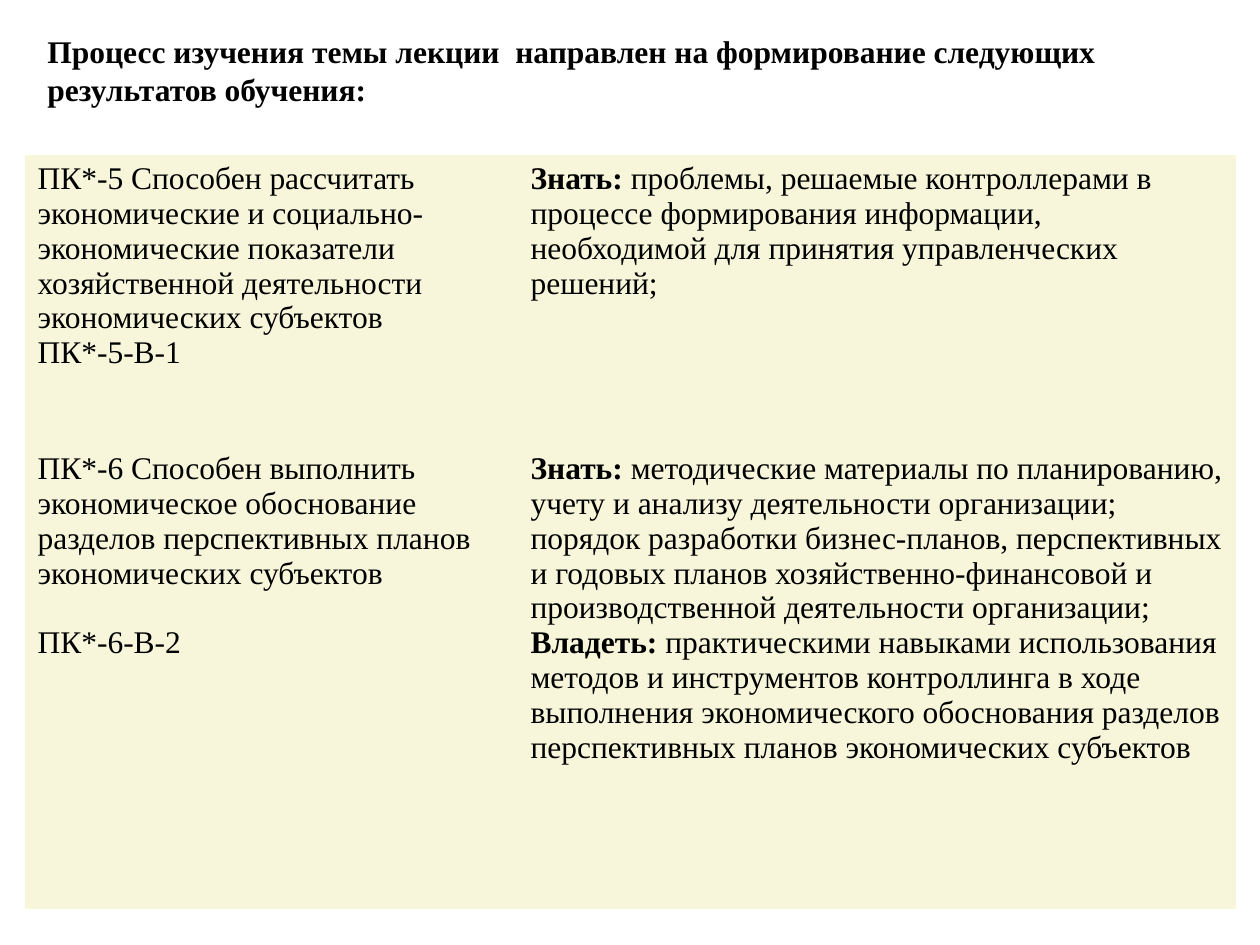
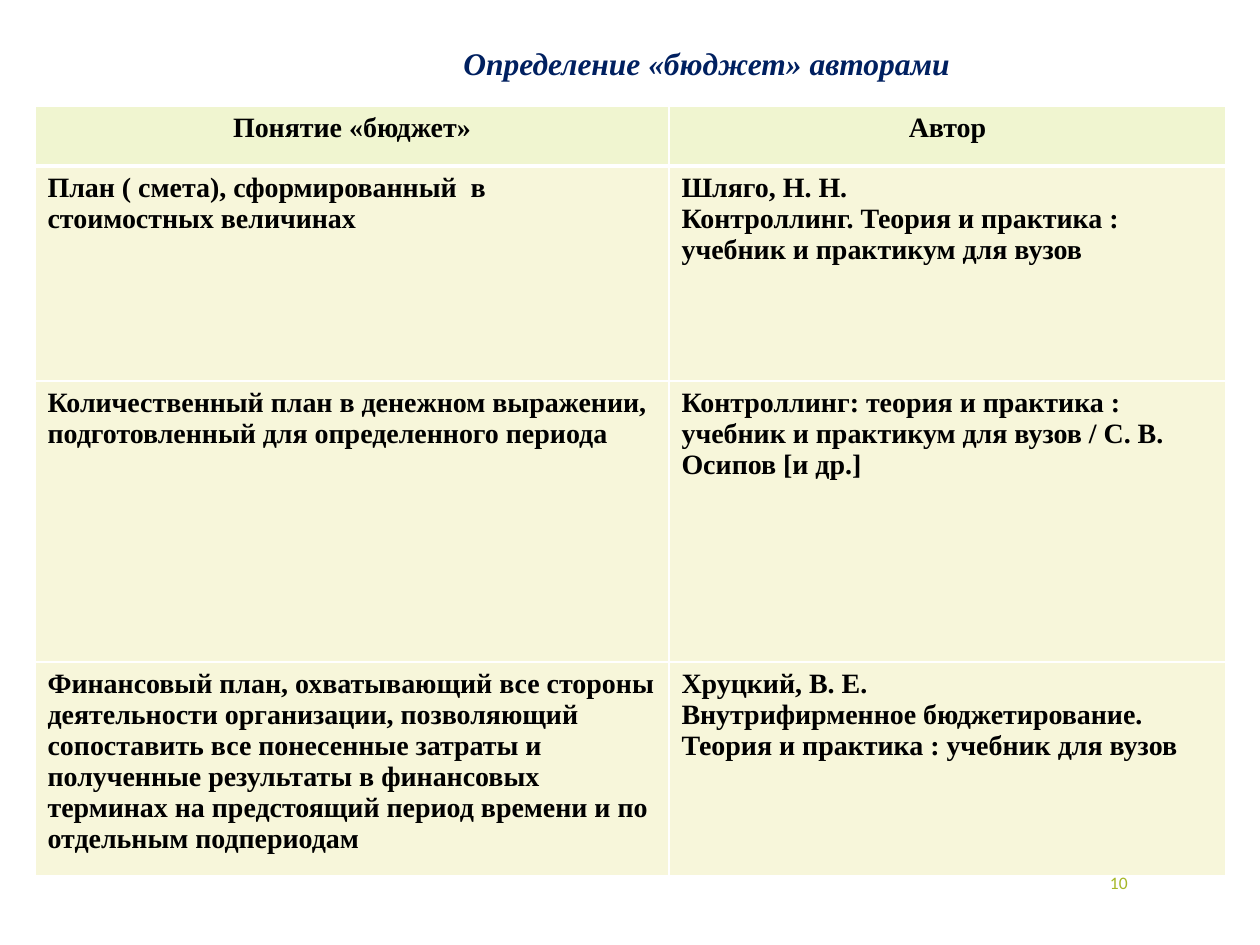
from lxml import etree
from pptx import Presentation
from pptx.dml.color import RGBColor
from pptx.enum.text import MSO_ANCHOR, PP_ALIGN
from pptx.oxml.ns import qn
from pptx.util import Emu, Pt

PX = 914400 / 126
LEFT, CENTER, RIGHT = PP_ALIGN.LEFT, PP_ALIGN.CENTER, PP_ALIGN.RIGHT
TOP, MIDDLE = MSO_ANCHOR.TOP, MSO_ANCHOR.MIDDLE
PLAIN_TABLE = "{2D5ABB26-0587-4C30-8999-92F81FD0307C}"
COLORS = {"text": "000000", "title": "002060", "number": "A6B727",
          "head": "F0F5D0", "body": "F7F6DA", "border": "FFFFFF"}

BODY = {"name": "Times New Roman", "size": Pt(18), "bold": False, "color": "text"}
BOLD = {**BODY, "bold": True}
CELL = {**BOLD, "size": Pt(16)}
TITLE = {**BOLD, "italic": True, "color": "title"}
NUMBER = {"name": "Calibri", "size": Pt(10), "color": "number"}

OUTCOMES = [
    [[[("ПК*-5 Способен рассчитать экономические и социально-экономические показатели "
        "хозяйственной деятельности экономических субъектов", BODY)],
      [("ПК*-5-В-1", BODY)]],
     [[("Знать: ", BOLD),
       ("проблемы, решаемые контроллерами в процессе формирования информации, "
        "необходимой для принятия управленческих решений;", BODY)]]],
    [[[("ПК*-6 Способен выполнить экономическое обоснование разделов перспективных планов "
        "экономических субъектов", BODY)],
      [("ПК*-6-В-2", BODY)]],
     [[("Знать: ", BOLD),
       ("методические материалы по планированию, учету и анализу деятельности организации; "
        "порядок разработки бизнес-планов, перспективных и годовых планов "
        "хозяйственно-финансовой и производственной деятельности организации;", BODY)],
      [("Владеть: ", BOLD),
       ("практическими навыками использования методов и инструментов контроллинга в ходе "
        "выполнения экономического обоснования разделов перспективных планов "
        "экономических субъектов", BODY)]]],
]

DEFINITIONS = [
    [["Понятие «бюджет»"], ["Автор"]],
    [["План ( смета), сформированный  в стоимостных величинах"],
     ["Шляго, Н. Н.", "Контроллинг. Теория и практика : учебник и практикум для вузов"]],
    [["Количественный план в денежном выражении, подготовленный для определенного периода"],
     ["Контроллинг: теория и практика : учебник и практикум для вузов / С. В. Осипов [и др.]"]],
    [["Финансовый план, охватывающий все стороны деятельности организации, позволяющий "
      "сопоставить все понесенные затраты и полученные результаты в финансовых терминах "
      "на предстоящий период времени и по отдельным подпериодам"],
     ["Хруцкий, В. Е.",
      "Внутрифирменное бюджетирование. Теория и практика : учебник для вузов"]],
]


def px(value):
    return Emu(round(value * PX))


def write(frame, paragraphs, align=LEFT):
    for index, runs in enumerate(paragraphs):
        paragraph = frame.paragraphs[0] if index == 0 else frame.add_paragraph()
        paragraph.alignment = align
        for text, style in runs:
            run = paragraph.add_run()
            run.text = text
            for key, value in style.items():
                if key == "color":
                    run.font.color.rgb = RGBColor.from_string(COLORS[value])
                else:
                    setattr(run.font, key, value)


def add_text(slide, box, text, style, align=LEFT, anchor=TOP):
    frame = slide.shapes.add_textbox(*map(px, box)).text_frame
    frame.word_wrap = True
    frame.vertical_anchor = anchor
    write(frame, [[(text, style)]], align)


def set_border(cell, side, points):
    line = etree.SubElement(cell._tc.get_or_add_tcPr(), qn(f"a:ln{side}"), w=str(Pt(points)))
    fill = etree.SubElement(line, qn("a:solidFill"))
    etree.SubElement(fill, qn("a:srgbClr"), val=COLORS["border"])


def add_table(slide, left, top, widths, heights, rows, has_head=False, bordered=False):
    box = left, top, sum(widths), sum(heights)
    table = slide.shapes.add_table(len(rows), len(widths), *map(px, box)).table
    table._tbl.tblPr.find(qn("a:tableStyleId")).text = PLAIN_TABLE
    table.first_row = has_head
    table.horz_banding = False
    for column, width in zip(table.columns, widths):
        column.width = px(width)
    for row_index, (row, height) in enumerate(zip(rows, heights)):
        table.rows[row_index].height = px(height)
        is_head = has_head and row_index == 0
        for column_index, paragraphs in enumerate(row):
            cell = table.cell(row_index, column_index)
            if bordered:
                after_head = has_head and row_index == 1
                weights = {"L": 1, "R": 1, "T": 3 if after_head else 1, "B": 3 if is_head else 1}
                for side, points in weights.items():
                    set_border(cell, side, points)
            cell.fill.solid()
            cell.fill.fore_color.rgb = RGBColor.from_string(COLORS["head" if is_head else "body"])
            write(cell.text_frame, paragraphs, CENTER if is_head else LEFT)
    return table


def build_outcomes(slide):
    table = add_table(slide, 25, 155, [493, 718], [290, 464], OUTCOMES)
    table.cell(1, 0).text_frame.paragraphs[1].space_before = Pt(20)
    add_text(slide, (35, 26, 1191, 90),
             "Процесс изучения темы лекции  направлен на формирование следующих "
             "результатов обучения:", BOLD)


def build_definitions(slide):
    add_text(slide, (964, 858, 176, 50), "10", NUMBER, RIGHT, MIDDLE)
    rows = [[[[(line, CELL)] for line in lines] for lines in row] for row in DEFINITIONS]
    add_table(slide, 35, 106, [634, 557], [60, 215, 281, 214], rows, has_head=True, bordered=True)
    add_text(slide, (451, 38, 784, 50), "Определение «бюджет» авторами", TITLE)


def main():
    presentation = Presentation()
    presentation.slide_width, presentation.slide_height = px(1260), px(945)
    for build in (build_outcomes, build_definitions):
        build(presentation.slides.add_slide(presentation.slide_layouts[6]))
    presentation.save("out.pptx")


if __name__ == "__main__":
    main()
